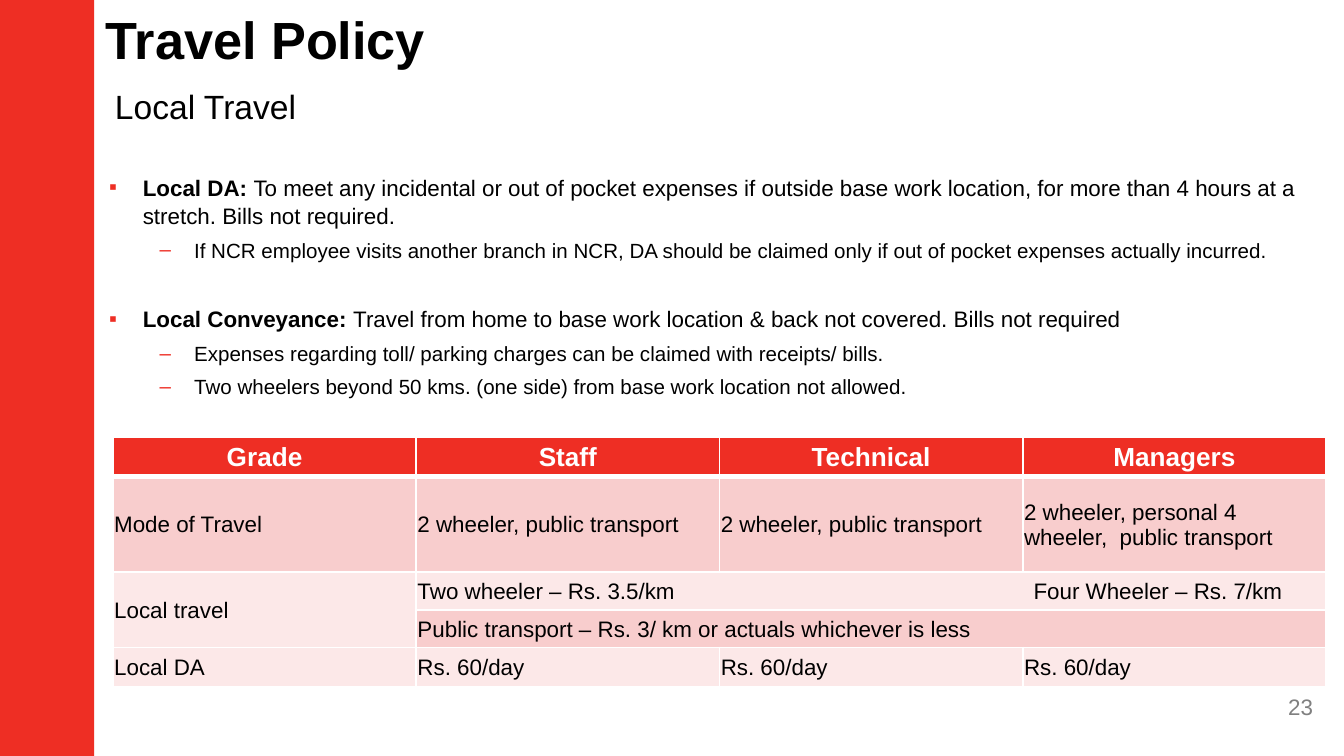
from lxml import etree
from pptx import Presentation
from pptx.dml.color import RGBColor
from pptx.enum import shapes, text
from pptx.oxml import ns
from pptx.util import Pt

COLORS = {"red": "EE2E24", "black": "000000", "white": "FFFFFF",
          "gray": "808080", "rose": "F8CDCD", "blush": "FCE8E8"}
RGB = {name: RGBColor.from_string(value) for name, value in COLORS.items()}


def add_xml(parent, tag, **attrs):
    return etree.SubElement(parent, ns.qn(tag), attrs)


def set_font(p, size, color="black", bold=None):
    p.font.name, p.font.size, p.font.bold = "Arial", Pt(size), bold
    p.font.color.rgb = RGB[color]


prs = Presentation()
prs.slide_width, prs.slide_height = Pt(720), Pt(405)
s = prs.slides.add_slide(prs.slide_layouts[1])

# Side band
sp = s.shapes.add_shape(shapes.MSO_SHAPE.RECTANGLE, 0, 0, Pt(50.5), Pt(405))
sp.shadow.inherit = False
sp.fill.solid()
sp.fill.fore_color.rgb = RGB["red"]
sp.line.fill.background()

# Title
sp = s.shapes.title
sp.left, sp.top, sp.width, sp.height = Pt(49.5), Pt(0), Pt(190), Pt(41)
tf = sp.text_frame
tf.word_wrap = False
tf.auto_size = text.MSO_AUTO_SIZE.NONE
tf.vertical_anchor = text.MSO_ANCHOR.BOTTOM
p = tf.paragraphs[0]
p.text = "Travel Policy"
p.alignment = text.PP_ALIGN.LEFT
set_font(p, 28, bold=True)

# Subtitle and page number
for words, box, size, color, align in (
        ("Local Travel", (54.5, 42.5, 330.5, 43), 18, "black", text.PP_ALIGN.LEFT),
        ("23", (666.5, 368, 44, 21), 12, "gray", text.PP_ALIGN.RIGHT)):
    tf = s.shapes.add_textbox(*map(Pt, box)).text_frame
    tf.word_wrap = True
    p = tf.paragraphs[0]
    p.text, p.alignment = words, align
    set_font(p, size, color)

# Policy list: level, space before, bold lead, text
items = [
    (0, 0, "Local DA: ", "To meet any incidental or out of pocket expenses if outside base "
     "work location, for more than 4 hours at a stretch. Bills not required."),
    (1, 4, "", "If NCR employee visits another branch in NCR, DA should be claimed only "
     "if out of pocket expenses actually incurred."),
    (0, 22.5, "Local Conveyance: ", "Travel from home to base work location & back not "
     "covered. Bills not required"),
    (1, 4, "", "Expenses regarding toll/ parking charges can be claimed with receipts/ bills."),
    (1, 4, "", "Two wheelers beyond 50 kms. (one side) from base work location not allowed."),
]
levels = [("▪", 18, 18, 12), ("–", 45.5, 18.5, 11)]  # bullet, margin, hanging, size
sp = s.placeholders[1]
sp.left, sp.top, sp.width, sp.height = Pt(58.5), Pt(92.4), Pt(653.5), Pt(138)
tf = sp.text_frame
tf.auto_size = text.MSO_AUTO_SIZE.NONE
tf.margin_left = tf.margin_top = tf.margin_right = tf.margin_bottom = 0
for i, (level, gap, lead, words) in enumerate(items):
    bullet, margin, hanging, size = levels[level]
    p = tf.add_paragraph() if i else tf.paragraphs[0]
    p.level, p.space_before, p.line_spacing = level, Pt(gap), 1.05
    pPr = p._p.get_or_add_pPr()
    pPr.set("marL", str(Pt(margin)))
    pPr.set("indent", str(-Pt(hanging)))
    add_xml(add_xml(pPr, "a:buClr"), "a:srgbClr", val=COLORS["red"])
    add_xml(pPr, "a:buFont", typeface="Arial")
    add_xml(pPr, "a:buChar", char=bullet)
    set_font(p, size)
    if lead:
        r = p.add_run()
        r.text, r.font.bold = lead, True
    p.add_run().text = words

# Allowance table
rows = [
    ["Grade", "Staff", "Technical", "Managers"],
    ["Mode of Travel", "2 wheeler, public transport", "2 wheeler, public transport",
     "2 wheeler, personal 4 wheeler,  public transport"],
    ["Local travel", "Two wheeler – Rs. 3.5/km\tFour Wheeler – Rs. 7/km", "", ""],
    ["", "Public transport – Rs. 3/ km or actuals whichever is less", "", ""],
    ["Local DA"] + ["Rs. 60/day"] * 3,
]
heights = [21.5, 51, 20.2, 20.2, 21]
fills = ["red", "rose", "blush", "rose", "blush"]
table = s.shapes.add_table(5, 4, Pt(60.5), Pt(234), Pt(650), Pt(sum(heights))).table
for col in table.columns:
    col.width = Pt(162.5)
for i, row in enumerate(rows):
    table.rows[i].height = Pt(heights[i])
    for j, words in enumerate(row):
        cell = table.cell(i, j)
        cell.vertical_anchor = text.MSO_ANCHOR.MIDDLE
        cell.margin_left = cell.margin_top = cell.margin_right = Pt(0.7)
        cell.margin_bottom = 0
        # White rules, thicker below the header
        for side in "LRTB":
            thick = (i, side) in ((0, "B"), (1, "T"))
            ln = add_xml(cell._tc.get_or_add_tcPr(), "a:ln" + side,
                         w=str(Pt(3 if thick else 1)))
            add_xml(add_xml(ln, "a:solidFill"), "a:srgbClr", val=COLORS["white"])
        cell.fill.solid()
        fill = "blush" if (i, j) == (3, 0) else fills[i]
        cell.fill.fore_color.rgb = RGB[fill]
        p = cell.text_frame.paragraphs[0]
        if "\t" in words:
            tabs = add_xml(p._p.get_or_add_pPr(), "a:tabLst")
            add_xml(tabs, "a:tab", pos=str(Pt(330)), algn="l")
        p.text = words
        if i == 0:
            p.alignment = text.PP_ALIGN.CENTER
            set_font(p, 14, "white", True)
        else:
            set_font(p, 12, bold=False)
table.cell(2, 0).merge(table.cell(3, 0))
for i in (2, 3):
    table.cell(i, 1).merge(table.cell(i, 3))

prs.save("out.pptx")
